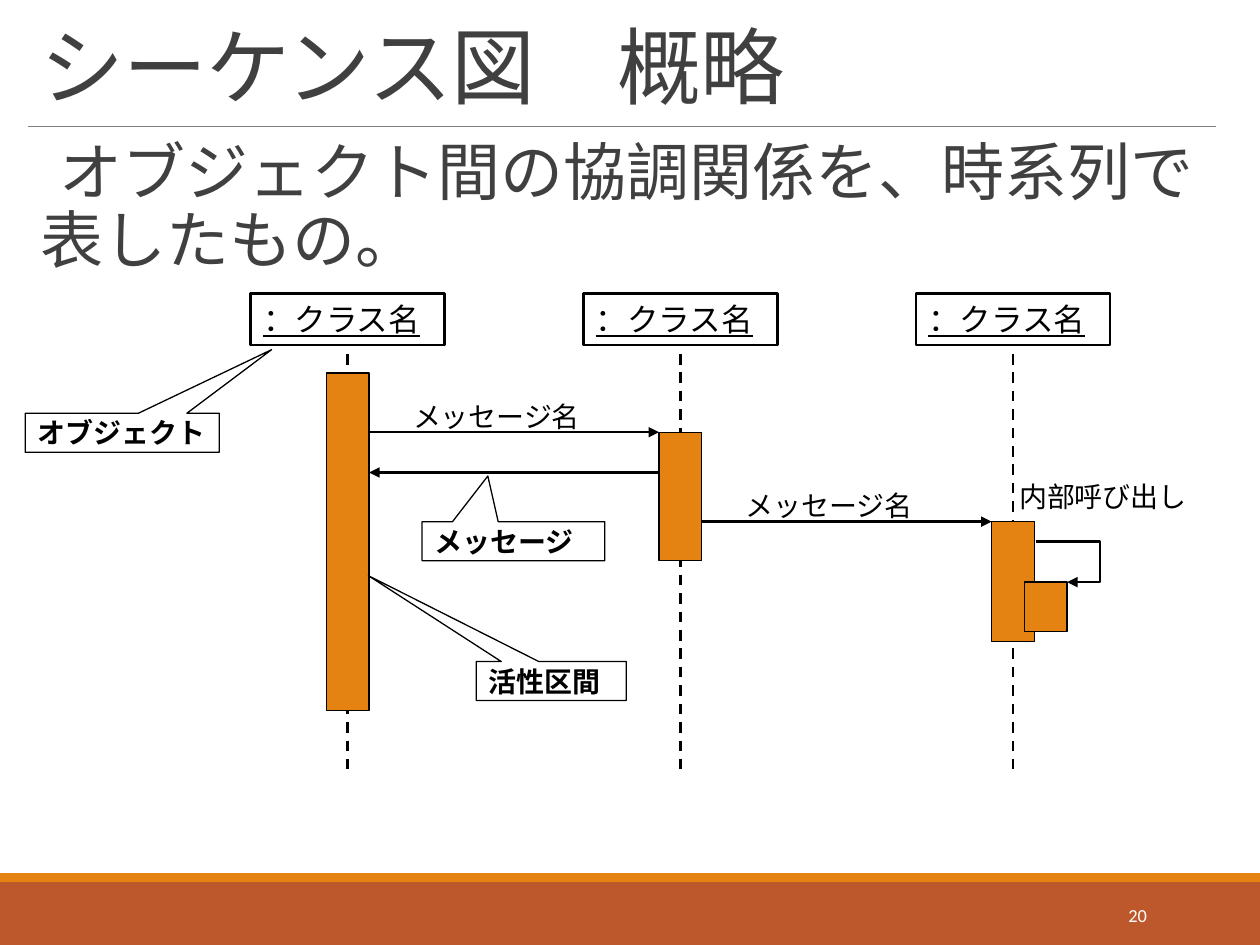
from typing import NamedTuple

from lxml.etree import SubElement
from pptx import Presentation
from pptx.dml.color import RGBColor
from pptx.enum.dml import MSO_LINE
from pptx.enum.shapes import MSO_CONNECTOR, MSO_SHAPE
from pptx.enum.text import MSO_ANCHOR, PP_ALIGN
from pptx.oxml.ns import qn
from pptx.util import Inches, Pt

BLACK = RGBColor(0x00, 0x00, 0x00)
WHITE = RGBColor(0xFF, 0xFF, 0xFF)
GRAY = RGBColor(0x80, 0x80, 0x80)
DARK_GRAY = RGBColor(0x40, 0x40, 0x40)
ORANGE = RGBColor(0xE4, 0x83, 0x12)
RUST = RGBColor(0xBD, 0x58, 0x2C)

LANE_CENTERS = [2.76 + 2.64 * lane for lane in range(3)]
BAR_WIDTH = 0.34
HALF_BAR = BAR_WIDTH / 2
HEADER_WIDTH = 1.54


class Box(NamedTuple):
    left: float
    top: float
    width: float
    height: float

    def lengths(self):
        return [Inches(value) for value in self]


class Style(NamedTuple):
    size: float
    font: str = "Arial"
    color: RGBColor = BLACK
    bold: bool = False
    underline: bool = False


class Activation(NamedTuple):
    center: float
    top: float
    height: float


class Message(NamedTuple):
    sender: int
    receiver: int
    y: float
    label: str = ""


class Callout(NamedTuple):
    text: str
    box: Box
    pointer: tuple[float, float]


ACTIVATIONS = [
    Activation(LANE_CENTERS[0], 2.96, 2.68),
    Activation(LANE_CENTERS[1], 3.43, 1.02),
    Activation(LANE_CENTERS[2], 4.14, 0.95),
    Activation(8.3, 4.62, 0.39),
]
MESSAGES = [
    Message(0, 1, 3.43, "メッセージ名"),
    Message(1, 2, 4.14, "メッセージ名"),
    Message(1, 0, 3.75),
]
CALLOUTS = [
    Callout("メッセージ", Box(3.35, 4.14, 1.45, 0.31), (-0.14, -1.67)),
    Callout("活性区間", Box(3.78, 5.25, 1.19, 0.31), (-1.22, -2.7)),
    Callout("オブジェクト", Box(0.2, 3.28, 1.54, 0.31), (0.77, -2.13)),
]
LABEL_STYLE = Style(16)
HEADER_STYLE = Style(18, underline=True)
CALLOUT_STYLE = Style(16, "Calibri", bold=True)


def write_text(shape, text: str, style: Style, anchor=MSO_ANCHOR.TOP, align=PP_ALIGN.LEFT):
    frame = shape.text_frame
    frame.word_wrap = True
    frame.vertical_anchor = anchor
    paragraph = frame.paragraphs[0]
    paragraph.alignment = align
    run = paragraph.add_run()
    run.text = text
    run.font.size = Pt(style.size)
    run.font.name = style.font
    run.font.color.rgb = style.color
    run.font.bold = style.bold
    run.font.underline = style.underline
    return paragraph


def add_text(slide, box: Box, text: str, style: Style, **options):
    shape = slide.shapes.add_textbox(*box.lengths())
    return shape, write_text(shape, text, style, **options)


def add_box(slide, box: Box, fill: RGBColor, line_width: float = 0, preset=MSO_SHAPE.RECTANGLE):
    shape = slide.shapes.add_shape(preset, *box.lengths())
    shape.shadow.inherit = False
    shape.fill.solid()
    shape.fill.fore_color.rgb = fill
    if line_width:
        shape.line.color.rgb = BLACK
        shape.line.width = Pt(line_width)
    else:
        shape.line.fill.background()
    return shape


def add_line(slide, start: tuple[float, float], end: tuple[float, float],
             color: RGBColor = BLACK, width: float = 1.5):
    points = [Inches(value) for value in (*start, *end)]
    line = slide.shapes.add_connector(MSO_CONNECTOR.STRAIGHT, *points)
    line.line.color.rgb = color
    line.line.width = Pt(width)
    SubElement(line._element.spPr, qn("a:effectLst"))
    return line


def add_arrowhead(shape):
    SubElement(shape.line._get_or_add_ln(), qn("a:tailEnd"), type="triangle")


def add_frame(slide):
    add_box(slide, Box(0, 7, 10, 0.5), RUST)
    add_box(slide, Box(0, 6.93, 10, 0.07), ORANGE)
    add_line(slide, (0.22, 1), (9.65, 1), GRAY, 0.5)
    _, title = add_text(slide, Box(0.22, 0.09, 9.43, 0.88), "シーケンス図　概略",
                        Style(48, "Calibri", DARK_GRAY), anchor=MSO_ANCHOR.BOTTOM)
    title.line_spacing = 0.85
    title.runs[0].font._element.set("spc", "-50")
    body, paragraph = add_text(slide, Box(0.22, 1.07, 9.43, 5.75),
                               "オブジェクト間の協調関係を、時系列で表したもの。",
                               Style(36, "Calibri", DARK_GRAY))
    body.text_frame.margin_left = body.text_frame.margin_right = 0
    paragraph.line_spacing = 0.9
    paragraph.space_before = Pt(12)
    paragraph.space_after = Pt(2)
    properties = paragraph._p.get_or_add_pPr()
    properties.set("marL", str(Inches(0.1)))
    properties.set("indent", str(Inches(-0.1)))
    SubElement(properties, qn("a:buChar"), char=" ")
    add_text(slide, Box(8.12, 7.06, 1.08, 0.4), "20", Style(10.5, "Calibri", WHITE),
             anchor=MSO_ANCHOR.MIDDLE, align=PP_ALIGN.RIGHT)


def add_message(slide, message: Message):
    start, end = LANE_CENTERS[message.sender], LANE_CENTERS[message.receiver]
    offset = HALF_BAR if end > start else -HALF_BAR
    add_arrowhead(add_line(slide, (start + offset, message.y), (end - offset, message.y)))
    if message.label:
        add_text(slide, Box(start + 0.42, message.y - 0.31, 1.88, 0.37),
                 message.label, LABEL_STYLE)


def add_self_call(slide):
    builder = slide.shapes.build_freeform(Inches(8.22), Inches(4.3))
    corners = [(8.73, 4.3), (8.73, 4.62), (8.47, 4.62)]
    builder.add_line_segments([(Inches(x), Inches(y)) for x, y in corners], close=False)
    shape = builder.convert_to_shape()
    shape.shadow.inherit = False
    shape.fill.background()
    shape.line.color.rgb = BLACK
    shape.line.width = Pt(1.5)
    add_arrowhead(shape)
    add_text(slide, Box(7.99, 3.76, 2.05, 0.37), "内部呼び出し", LABEL_STYLE)


def add_callout(slide, callout: Callout):
    shape = add_box(slide, callout.box, WHITE, 0.75, MSO_SHAPE.RECTANGULAR_CALLOUT)
    for index, value in enumerate(callout.pointer):
        shape.adjustments[index] = value
    write_text(shape, callout.text, CALLOUT_STYLE, anchor=MSO_ANCHOR.MIDDLE)


def main():
    presentation = Presentation()
    presentation.slide_width = Inches(10)
    presentation.slide_height = Inches(7.5)
    slide = presentation.slides.add_slide(presentation.slide_layouts[6])
    add_frame(slide)
    for center in LANE_CENTERS:
        header = add_box(slide, Box(center - HEADER_WIDTH / 2, 2.33, HEADER_WIDTH, 0.41), WHITE, 1.5)
        write_text(header, "：クラス名", HEADER_STYLE)
        add_line(slide, (center, 2.81), (center, 6.11)).line.dash_style = MSO_LINE.DASH
    for bar in ACTIVATIONS:
        add_box(slide, Box(bar.center - HALF_BAR, bar.top, BAR_WIDTH, bar.height), ORANGE, 0.75)
    for message in MESSAGES:
        add_message(slide, message)
    add_self_call(slide)
    for callout in CALLOUTS:
        add_callout(slide, callout)
    presentation.save("out.pptx")


if __name__ == "__main__":
    main()
